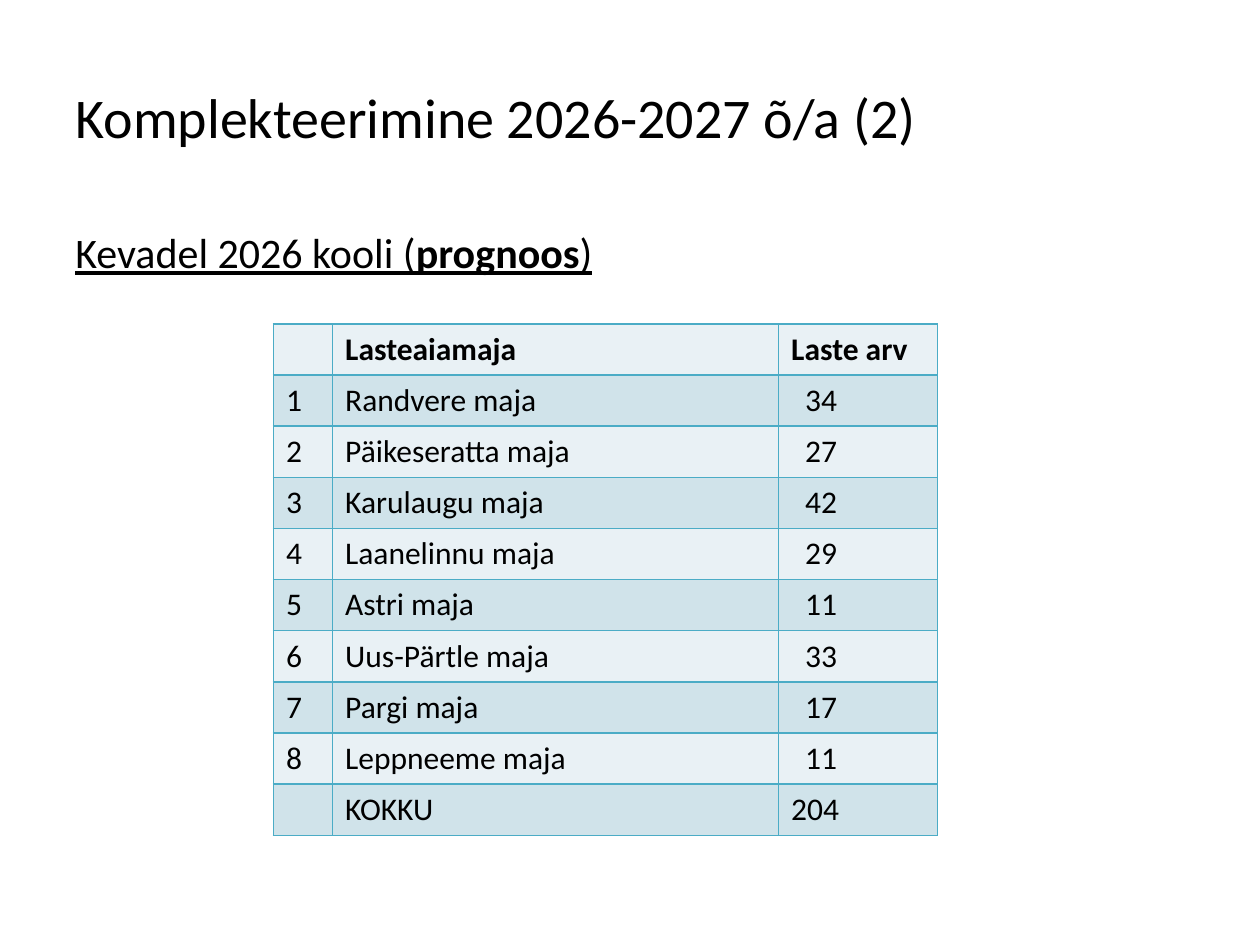
from dataclasses import dataclass

from pptx import Presentation
from pptx.dml.color import RGBColor as Color
from pptx.enum.text import MSO_ANCHOR as Anchor, PP_ALIGN as Align
from pptx.oxml import parse_xml
from pptx.oxml.ns import nsdecls
from pptx.util import Inches, Pt


@dataclass(frozen=True)
class Theme:
    font: str = "Calibri"
    title_size: int = 32
    subtitle_size: int = 24
    table_size: int = 18
    text: str = "000000"
    border: str = "4BACC6"
    border_width: int = 1
    bands: tuple = ("E9F1F5", "D0E3EA")


class SlideBuilder:
    def __init__(self, slide, theme):
        self.slide = slide
        self.theme = theme

    def style(self, paragraph, size, bold=None):
        font = paragraph.font
        font.name = self.theme.font
        font.size = Pt(size)
        font.bold = bold
        font.color.rgb = Color.from_string(self.theme.text)

    def title(self, text, left, top, width, height):
        shape = self.slide.shapes.title
        shape.left, shape.top = Inches(left), Inches(top)
        shape.width, shape.height = Inches(width), Inches(height)
        frame = shape.text_frame
        frame.text = text
        frame.vertical_anchor = Anchor.MIDDLE
        paragraph = frame.paragraphs[0]
        paragraph.alignment = Align.LEFT
        self.style(paragraph, self.theme.title_size)

    def subtitle(self, parts, left, top, width, height):
        """Underlined line; parts holds (text, bold) pairs."""
        box = self.slide.shapes.add_textbox(
            Inches(left), Inches(top), Inches(width), Inches(height))
        box.text_frame.word_wrap = True
        paragraph = box.text_frame.paragraphs[0]
        self.style(paragraph, self.theme.subtitle_size)
        for text, bold in parts:
            run = paragraph.add_run()
            run.text = text
            run.font.bold = bold
            run.font.underline = True

    def borders(self, cell):
        properties = cell._tc.get_or_add_tcPr()
        for side in ("lnL", "lnR", "lnT", "lnB"):
            properties.append(parse_xml(
                f'<a:{side} {nsdecls("a")} w="{Pt(self.theme.border_width)}">'
                f'<a:solidFill><a:srgbClr val="{self.theme.border}"/></a:solidFill>'
                f'</a:{side}>'))

    def table(self, rows, column_widths, left, top, height, count_margin):
        table = self.slide.shapes.add_table(
            len(rows), len(column_widths), Inches(left), Inches(top),
            Inches(sum(column_widths)), Inches(height)).table
        table.first_row = table.horz_banding = False
        for column, width in zip(table.columns, column_widths):
            column.width = Inches(width)
        for row_index, values in enumerate(rows):
            band = self.theme.bands[row_index % 2]
            for column_index, value in enumerate(values):
                cell = table.cell(row_index, column_index)
                self.borders(cell)
                cell.fill.solid()
                cell.fill.fore_color.rgb = Color.from_string(band)
                cell.text = str(value)
                self.style(cell.text_frame.paragraphs[0],
                           self.theme.table_size, bold=row_index == 0)
        # Two-digit counts are set in from the heading and the total
        for row_index in range(1, len(rows) - 1):
            table.cell(row_index, len(column_widths) - 1).margin_left = Inches(count_margin)


def main():
    presentation = Presentation()
    presentation.slide_width, presentation.slide_height = Inches(10), Inches(7.5)
    slide = presentation.slides.add_slide(presentation.slide_layouts[5])
    builder = SlideBuilder(slide, Theme())

    # Headings
    builder.title("Komplekteerimine 2026-2027 õ/a (2)", 0.5, 0.3, 9, 1.25)
    builder.subtitle(
        [("Kevadel 2026 kooli (", False), ("prognoos", True), (")", False)],
        0.5, 1.75, 9, 0.6)

    # Children per kindergarten house, with the total
    houses = [
        ("Randvere maja", 34),
        ("Päikeseratta maja", 27),
        ("Karulaugu maja", 42),
        ("Laanelinnu maja", 29),
        ("Astri maja", 11),
        ("Uus-Pärtle maja", 33),
        ("Pargi maja", 17),
        ("Leppneeme maja", 11),
    ]
    rows = [("", "Lasteaiamaja", "Laste arv")]
    rows += [(number, *house) for number, house in enumerate(houses, 1)]
    rows.append(("", "KOKKU", sum(count for _, count in houses)))
    builder.table(rows, (0.47, 3.54, 1.26), left=2.17, top=2.57,
                  height=4.06, count_margin=0.21)

    presentation.save("out.pptx")


if __name__ == "__main__":
    main()
